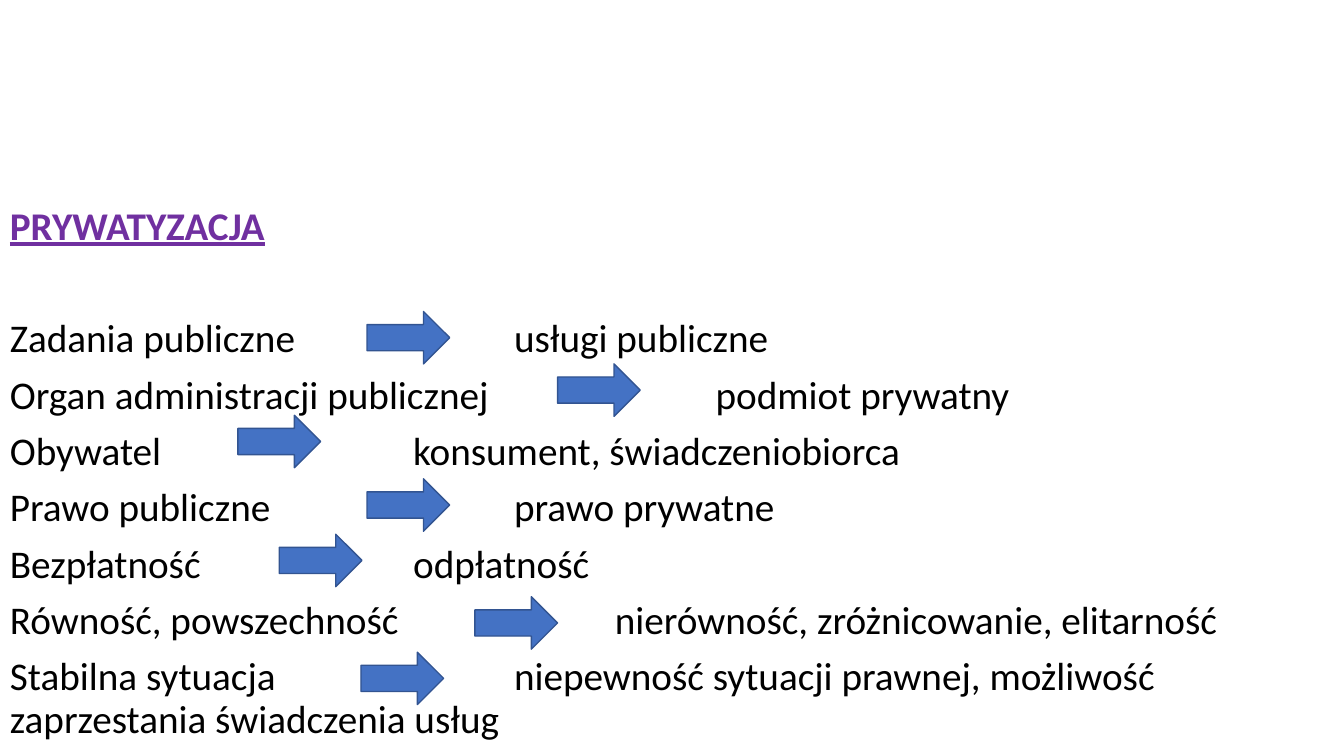
from typing import NamedTuple

from lxml.etree import SubElement
from pptx import Presentation
from pptx.dml.color import RGBColor
from pptx.enum.shapes import MSO_SHAPE
from pptx.oxml.ns import qn
from pptx.util import Emu, Pt

PURPLE = RGBColor(0x70, 0x30, 0xA0)
BLACK = RGBColor(0x00, 0x00, 0x00)
BLUE = RGBColor(0x44, 0x72, 0xC4)
NAVY = RGBColor(0x32, 0x54, 0x91)

WIDTH, HEIGHT = 1333, 750
TEXT_TOP = 200
ARROW_W, ARROW_H = 82, 52


class Change(NamedTuple):
    """A shift from one state to another; stop is the tab before the second."""
    before: str
    after: str
    stop: int
    arrow_x: int
    arrow_y: int


CHANGES = [
    Change("Zadania publiczne", "usługi publiczne", 500, 364, 309),
    Change("Organ administracji publicznej", "podmiot prywatny", 700, 553, 361),
    Change("Obywatel", "konsument, świadczeniobiorca", 400, 236, 412),
    Change("Prawo publiczne", "prawo prywatne", 500, 364, 475),
    Change("Bezpłatność", "odpłatność", 400, 277, 530),
    Change("Równość, powszechność", "nierówność, zróżnicowanie, elitarność",
           600, 471, 592),
    Change("Stabilna sytuacja",
           "niepewność sytuacji prawnej, możliwość zaprzestania świadczenia usług",
           500, 358, 647),
]


def px(count: int) -> Emu:
    """Turn px, 100 to the inch, into EMU."""
    return Emu(count * 9144)


def write(par, text: str, color: RGBColor, gap: int = 10) -> None:
    par.text = text
    par.line_spacing = 0.9
    par.space_before = Pt(gap)
    for run in par.runs:
        run.font.name = "Calibri"
        run.font.size = Pt(28)
        run.font.color.rgb = color


def add_tab(par, stop: int) -> None:
    tabs = SubElement(par._p.get_or_add_pPr(), qn("a:tabLst"))
    SubElement(tabs, qn("a:tab"), pos=str(px(stop)), algn="l")


def add_text(slide) -> None:
    box = slide.shapes.add_textbox(0, px(TEXT_TOP), px(WIDTH),
                                   px(HEIGHT - TEXT_TOP))
    frame = box.text_frame
    frame.word_wrap = True
    title = frame.paragraphs[0]
    write(title, "PRYWATYZACJA", PURPLE)
    title.font.bold = True
    for run in title.runs:
        run.font.bold = True
        run.font.underline = True
    for index, change in enumerate(CHANGES):
        par = frame.add_paragraph()
        gap = 50 if index == 0 else 10
        write(par, f"{change.before}\t{change.after}", BLACK, gap)
        add_tab(par, change.stop)


def add_arrow(slide, change: Change) -> None:
    arrow = slide.shapes.add_shape(
        MSO_SHAPE.RIGHT_ARROW, px(change.arrow_x), px(change.arrow_y),
        px(ARROW_W), px(ARROW_H))
    arrow.shadow.inherit = False
    arrow.fill.solid()
    arrow.fill.fore_color.rgb = BLUE
    arrow.line.color.rgb = NAVY
    arrow.line.width = Pt(1)


def main() -> None:
    deck = Presentation()
    deck.slide_width = px(WIDTH)
    deck.slide_height = px(HEIGHT)
    slide = deck.slides.add_slide(deck.slide_layouts[6])
    add_text(slide)
    for change in CHANGES:
        add_arrow(slide, change)
    deck.save("out.pptx")


if __name__ == "__main__":
    main()
